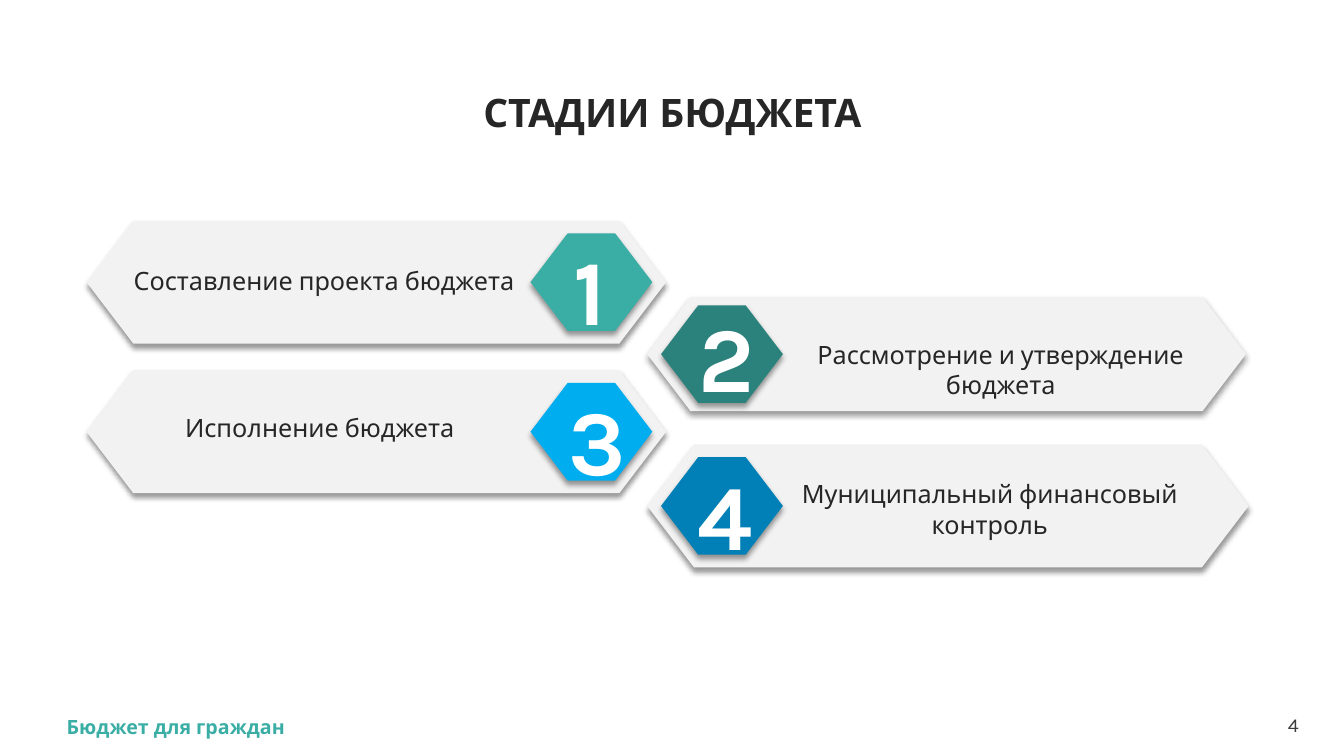
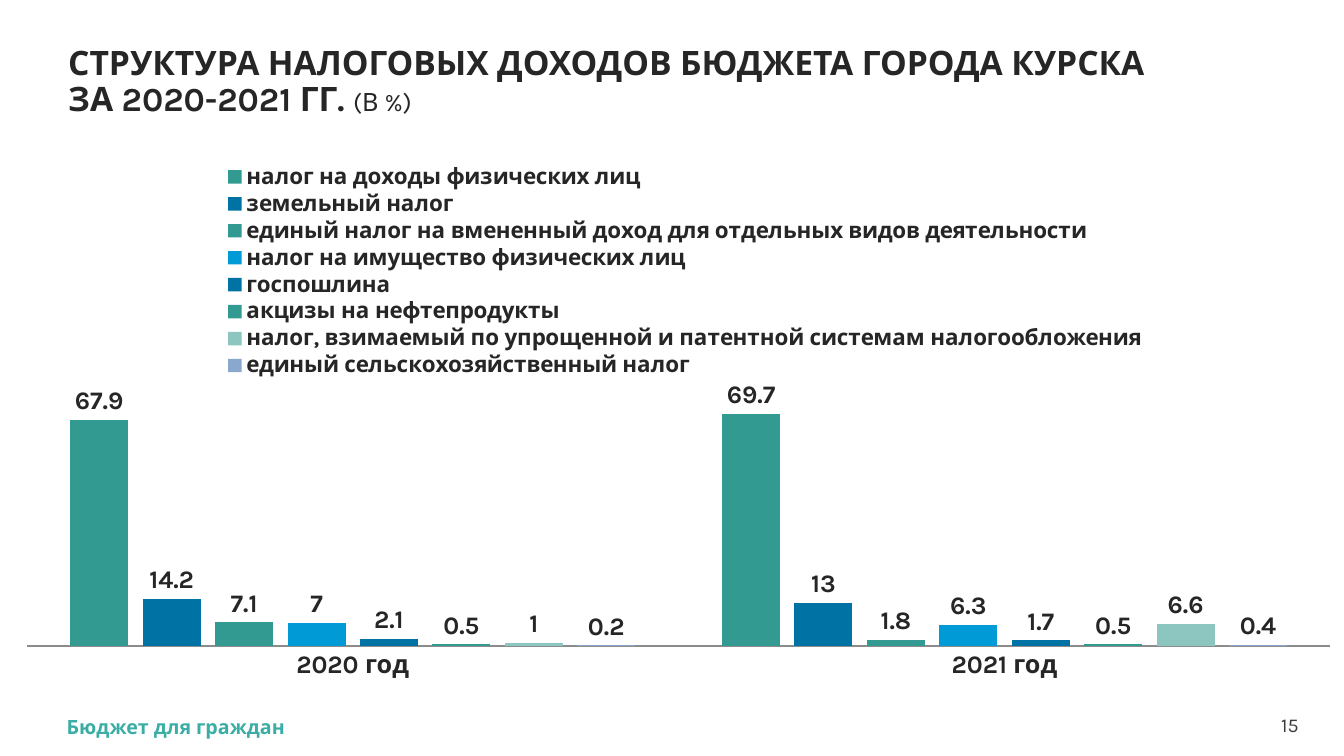
from lxml import etree
from pptx import Presentation
from pptx.chart.data import CategoryChartData
from pptx.dml.color import RGBColor
from pptx.enum.chart import XL_CHART_TYPE, XL_LABEL_POSITION, XL_LEGEND_POSITION, XL_TICK_MARK
from pptx.enum.shapes import MSO_SHAPE
from pptx.enum.text import MSO_ANCHOR, PP_ALIGN
from pptx.oxml import parse_xml
from pptx.oxml.ns import nsdecls, qn
from pptx.util import Cm, Pt

HEXAGON = MSO_SHAPE.HEXAGON
COLUMNS = XL_CHART_TYPE.COLUMN_CLUSTERED
OUTSIDE = XL_LABEL_POSITION.OUTSIDE_END
LEGEND_TOP = XL_LEGEND_POSITION.TOP
NO_TICK = XL_TICK_MARK.NONE
TOP, MIDDLE = MSO_ANCHOR.TOP, MSO_ANCHOR.MIDDLE
LEFT, CENTER, RIGHT = PP_ALIGN.LEFT, PP_ALIGN.CENTER, PP_ALIGN.RIGHT

FONT = "Karla"
WHITE = RGBColor(0xFF, 0xFF, 0xFF)
DARK = RGBColor(0x26, 0x26, 0x26)
GRAY = RGBColor(0x3C, 0x3C, 0x3C)
AXIS = RGBColor(0x8C, 0x8C, 0x8C)
PANEL = RGBColor(0xF2, 0xF2, 0xF2)
TEAL = RGBColor(0x3A, 0xAD, 0xA5)
DEEP_TEAL = RGBColor(0x2B, 0x82, 0x7C)
SKY = RGBColor(0x00, 0xAD, 0xEE)
BLUE = RGBColor(0x00, 0x80, 0xB6)
BAR_TEAL = RGBColor(0x33, 0x9A, 0x92)
BAR_BLUE = RGBColor(0x00, 0x72, 0xA3)
BAR_SKY = RGBColor(0x00, 0x9A, 0xD6)
BAR_PALE_TEAL = RGBColor(0x8D, 0xC5, 0xC0)
BAR_PALE_BLUE = RGBColor(0x8A, 0xA8, 0xCD)

FOOTER = "Бюджет для граждан"

STAGES_TITLE = "СТАДИИ БЮДЖЕТА"
BADGE_W, BADGE_H, BADGE_GAP = 3.07, 2.46, 0.35
STAGES = [
    dict(text="Составление проекта бюджета", color=TEAL, badge_right=True,
         panel=(2.18, 5.56, 14.61, 3.1), label=(2.9, 6.55, 10.54, 1.02), number=(14.22, 6.5)),
    dict(text="Рассмотрение и утверждение бюджета", color=DEEP_TEAL, badge_right=False,
         panel=(16.31, 7.49, 15.09, 2.87), label=(19.43, 8.43, 11.58, 1.8), number=(17.6, 8.2)),
    dict(text="Исполнение бюджета", color=SKY, badge_right=True,
         panel=(2.18, 9.33, 14.61, 3.1), label=(2.79, 10.26, 10.54, 1.02), number=(14.33, 10.29)),
    dict(text="Муниципальный финансовый контроль", color=BLUE, badge_right=False,
         panel=(16.31, 11.2, 15.16, 3.1), label=(19.51, 11.94, 10.87, 1.8), number=(17.58, 12.17)),
]

TAXES_TITLE = ("СТРУКТУРА НАЛОГОВЫХ ДОХОДОВ БЮДЖЕТА ГОРОДА КУРСКА", "ЗА 2020-2021 ГГ. ")
TAXES_UNIT = "(В %)"
YEARS = ["2020 год", "2021 год"]
TAXES = [
    ("налог на доходы физических лиц", (67.9, 69.7), BAR_TEAL),
    ("земельный налог", (14.2, 13), BAR_BLUE),
    ("единый налог на вмененный доход для отдельных видов деятельности", (7.1, 1.8), BAR_TEAL),
    ("налог на имущество физических лиц", (7, 6.3), BAR_SKY),
    ("госпошлина", (2.1, 1.7), BAR_BLUE),
    ("акцизы на нефтепродукты", (0.5, 0.5), BAR_TEAL),
    ("налог, взимаемый по упрощенной и патентной системам налогообложения", (1, 6.6), BAR_PALE_TEAL),
    ("единый сельскохозяйственный налог", (0.2, 0.4), BAR_PALE_BLUE),
]


def set_font(font, size, color=DARK, bold=False):
    font.name = FONT
    font.size = Pt(size)
    font.bold = bold
    font.color.rgb = color


def add_text(s, box, text, size, color=DARK, bold=False, align=LEFT, anchor=TOP, inset=True):
    sp = s.shapes.add_textbox(*map(Cm, box))
    tf = sp.text_frame
    tf.word_wrap = True
    tf.vertical_anchor = anchor
    if not inset:
        tf.margin_left = tf.margin_right = tf.margin_top = tf.margin_bottom = 0
    p = tf.paragraphs[0]
    p.alignment = align
    p.add_run().text = text
    set_font(p.font, size, color, bold)
    return p


def add_title(s, box, text, size, align=LEFT):
    p = add_text(s, box, text, size, bold=True, align=align, anchor=MIDDLE)
    p.line_spacing = 0.9
    return p


def add_slide(prs, number):
    s = prs.slides.add_slide(prs.slide_layouts[6])
    add_text(s, (31.43, 17.96, 1.3, 0.61), number, 14, GRAY, align=RIGHT, anchor=MIDDLE, inset=False)
    add_text(s, (1.68, 18.01, 29, 0.61), FOOTER, 14, TEAL, bold=True, anchor=MIDDLE, inset=False)
    return s


def add_hexagon(s, box, color):
    sp = s.shapes.add_shape(HEXAGON, *map(Cm, box))
    sp.adjustments[0] = 0.381
    sp.fill.solid()
    sp.fill.fore_color.rgb = color
    sp.line.fill.background()
    sp.shadow.inherit = False
    effects = sp.element.spPr.find(qn("a:effectLst"))
    shadow = etree.SubElement(effects, qn("a:outerShdw"), blurRad=str(Pt(4)), dist=str(Pt(3)),
                              dir="5400000", algn="t", rotWithShape="0")
    tint = etree.SubElement(shadow, qn("a:srgbClr"), val="000000")
    etree.SubElement(tint, qn("a:alpha"), val="40000")


def add_stage(s, number, stage):
    x, y, w, h = stage["panel"]
    badge_x = x + w - BADGE_W - BADGE_GAP if stage["badge_right"] else x + BADGE_GAP
    add_hexagon(s, stage["panel"], PANEL)
    add_hexagon(s, (badge_x, y + (h - BADGE_H) / 2, BADGE_W, BADGE_H), stage["color"])
    add_text(s, stage["label"], stage["text"], 18, align=CENTER)
    add_text(s, (*stage["number"], 1.32, 1.52), str(number), 66, WHITE, bold=True,
             align=CENTER, anchor=MIDDLE, inset=False)


def set_layout(parent, index, box, target=""):
    old = parent.find(qn("c:layout"))
    if old is not None:
        parent.remove(old)
    sizes = "".join(f'<c:{k} val="{v}"/>' for k, v in zip("xywh", box))
    parent.insert(index, parse_xml(
        f'<c:layout {nsdecls("c")}><c:manualLayout>{target}<c:xMode val="edge"/>'
        f'<c:yMode val="edge"/>{sizes}</c:manualLayout></c:layout>'))


def add_tax_chart(s):
    data = CategoryChartData()
    data.categories = YEARS
    for name, values, _ in TAXES:
        data.add_series(name, values)
    chart = s.shapes.add_chart(COLUMNS, 0, Cm(3.96), Cm(33.87), Cm(13.69), data).chart
    set_font(chart.font, 18, bold=True)
    chart.has_title = False
    chart.has_legend = True
    chart.legend.position = LEGEND_TOP
    chart.legend.include_in_layout = False
    set_font(chart.legend.font, 16, bold=True)

    axis = chart.category_axis
    axis.major_tick_mark = axis.minor_tick_mark = NO_TICK
    axis.format.line.color.rgb = AXIS
    scale = chart.value_axis
    scale.visible = False
    scale.has_major_gridlines = False
    scale.minimum_scale, scale.maximum_scale = 0, 80

    plot = chart.plots[0]
    plot.gap_width, plot.overlap = 150, -25
    plot.vary_by_categories = False
    plot.has_data_labels = True
    plot.data_labels.show_value = True
    plot.data_labels.position = OUTSIDE
    set_font(plot.data_labels.font, 18, bold=True)
    for series, (_, _, color) in zip(plot.series, TAXES):
        series.format.fill.solid()
        series.format.fill.fore_color.rgb = color

    root = chart.element
    set_layout(root.xpath("c:chart/c:plotArea")[0], 0, (0.02, 0.41, 0.97, 0.49),
               '<c:layoutTarget val="inner"/>')
    set_layout(root.xpath("c:chart/c:legend")[0], 1, (0.15, 0.01, 0.72, 0.4))


def main():
    prs = Presentation()
    prs.slide_width, prs.slide_height = Cm(33.87), Cm(19.05)

    s = add_slide(prs, "4")
    for number, stage in enumerate(STAGES, 1):
        add_stage(s, number, stage)
    add_title(s, (0.41, 2.37, 33.07, 1.07), STAGES_TITLE, 28, CENTER)

    s = add_slide(prs, "15")
    p = add_title(s, (1.47, 1.12, 30.18, 1.93), TAXES_TITLE[0], 24)
    p.add_line_break()
    p.add_run().text = TAXES_TITLE[1]
    r = p.add_run()
    r.text = TAXES_UNIT
    set_font(r.font, 18)
    add_tax_chart(s)

    prs.save("out.pptx")


if __name__ == "__main__":
    main()
